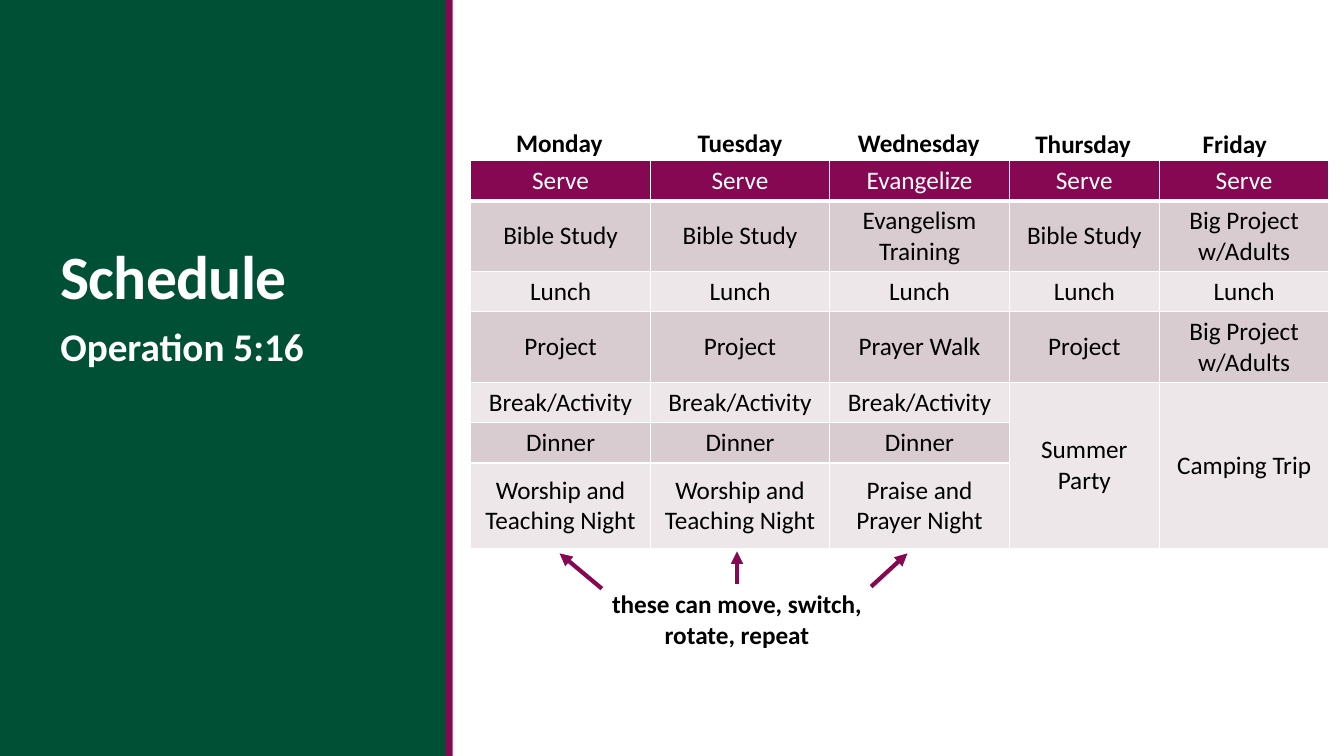
import pptx
import pptx.dml.color
import pptx.enum.shapes
import pptx.enum.text
import pptx.oxml.ns
import pptx.util
from lxml import etree

Inches = pptx.util.Inches
Pt = pptx.util.Pt
Align = pptx.enum.text.PP_ALIGN
Anchor = pptx.enum.text.MSO_ANCHOR
qn = pptx.oxml.ns.qn

GREEN, PLUM, WHITE, BLACK = "005035", "860852", "FFFFFF", "000000"
BANDS = ("EDE7E9", "D9CCD1")

COLUMN_WIDTHS = (1.78, 1.78, 1.78, 1.49, 1.68)
ROW_HEIGHTS = (0.39, 0.69, 0.39, 0.69, 0.39, 0.39, 0.85)
SCHEDULE = (
    ("Serve", "Serve", "Evangelize", "Serve", "Serve"),
    ("Bible Study", "Bible Study", "Evangelism Training", "Bible Study", "Big Project w/Adults"),
    ("Lunch",) * 5,
    ("Project", "Project", "Prayer Walk", "Project", "Big Project w/Adults"),
    ("Break/Activity",) * 3 + ("Summer Party", "Camping Trip"),
    ("Dinner",) * 3,
    ("Worship and Teaching Night", "Worship and Teaching Night", "Praise and Prayer Night"),
)
EVENING_ROW, PARTY_COLUMNS = 4, (3, 4)
DAYS = (
    ("Monday", 5.02, 1.21, 1.07),
    ("Tuesday", 6.82, 1.21, 1.05),
    ("Wednesday", 8.41, 1.21, 1.42),
    ("Thursday", 10.17, 1.22, 1.16),
    ("Friday", 11.83, 1.22, 0.84),
)
ARROWS = (
    ((7.31, 5.79), (7.31, 5.47)),
    ((8.64, 5.82), (9, 5.49)),
    ((5.97, 5.84), (5.55, 5.49)),
)


def rgb(value):
    return pptx.dml.color.RGBColor.from_string(value)


class Page:
    font = "Calibri"

    def __init__(self, deck):
        self.shapes = deck.slides.add_slide(deck.slide_layouts[6]).shapes

    def panel(self, left, top, width, height, color):
        shape = self.shapes.add_shape(
            pptx.enum.shapes.MSO_SHAPE.RECTANGLE,
            Inches(left), Inches(top), Inches(width), Inches(height))
        shape.shadow.inherit = False
        shape.fill.solid()
        shape.fill.fore_color.rgb = rgb(color)
        shape.line.fill.background()

    def add_spans(self, para, text, size, color, bold=False):
        """Add the text as runs, one for each line."""
        spans = []
        for number, line in enumerate(text.split("\n")):
            if number:
                para.add_line_break()
            span = para.add_run()
            span.text = line
            span.font.name = self.font
            span.font.size = Pt(size)
            span.font.bold = bold
            span.font.color.rgb = rgb(color)
            spans.append(span)
        return spans

    def text(self, text, left, top, width, height, size=18, color=BLACK,
             align=Align.LEFT, anchor=Anchor.TOP, wrap=False):
        """Add a bold text box and return its paragraph and runs."""
        box = self.shapes.add_textbox(Inches(left), Inches(top), Inches(width), Inches(height))
        frame = box.text_frame
        frame.word_wrap = wrap
        frame.vertical_anchor = anchor
        para = frame.paragraphs[0]
        para.alignment = align
        return para, self.add_spans(para, text, size, color, bold=True)

    def borders(self, cell, bottom):
        properties = cell._tc.get_or_add_tcPr()
        for side, width in (("L", 1), ("R", 1), ("T", 1), ("B", bottom)):
            line = etree.SubElement(properties, qn(f"a:ln{side}"), w=str(Pt(width)))
            fill = etree.SubElement(line, qn("a:solidFill"))
            etree.SubElement(fill, qn("a:srgbClr"), val=WHITE)

    def table(self, left, top):
        table = self.shapes.add_table(
            len(ROW_HEIGHTS), len(COLUMN_WIDTHS), Inches(left), Inches(top),
            Inches(sum(COLUMN_WIDTHS)), Inches(sum(ROW_HEIGHTS))).table
        table.horz_banding = False
        for column, width in zip(table.columns, COLUMN_WIDTHS):
            column.width = Inches(width)
        for number, (row, height) in enumerate(zip(table.rows, ROW_HEIGHTS)):
            row.height = Inches(height)
            header = number == 0
            for cell in row.cells:
                self.borders(cell, 3 if header else 1)
                cell.fill.solid()
                cell.fill.fore_color.rgb = rgb(PLUM if header else BANDS[number % 2])
            for cell, text in zip(row.cells, SCHEDULE[number]):
                cell.vertical_anchor = Anchor.MIDDLE
                para = cell.text_frame.paragraphs[0]
                para.alignment = Align.CENTER
                self.add_spans(para, text, 18, WHITE if header else BLACK)
        for column in PARTY_COLUMNS:
            table.cell(EVENING_ROW, column).merge(table.cell(len(ROW_HEIGHTS) - 1, column))

    def arrow(self, start, end):
        connector = self.shapes.add_connector(
            pptx.enum.shapes.MSO_CONNECTOR.STRAIGHT, *map(Inches, start + end))
        connector.line.color.rgb = rgb(PLUM)
        connector.line.width = Pt(3)
        etree.SubElement(connector.line._get_or_add_ln(), qn("a:tailEnd"), type="triangle")
        etree.SubElement(connector._element.spPr, qn("a:effectLst"))


def main():
    deck = pptx.Presentation()
    deck.slide_width, deck.slide_height = Inches(13.33), Inches(7.5)
    page = Page(deck)
    page.panel(0, 0, 4.43, 7.5, GREEN)
    page.panel(4.42, 0, 0.07, 7.5, PLUM)

    para, spans = page.text("Schedule", 0.5, 0.65, 3.58, 2.5, 44, WHITE,
                            anchor=Anchor.BOTTOM, wrap=True)
    para.line_spacing = 0.85
    spans[0].font._element.set("spc", "-50")
    para, spans = page.text("Operation 5:16", 0.5, 3.2, 3.5, 3.7, 28, WHITE, wrap=True)
    para.line_spacing = 0.9
    para.space_before, para.space_after = Pt(12), Pt(2)

    page.table(4.67, 1.59)
    for day, left, top, width in DAYS:
        page.text(day, left, top, width, 0.4)
    page.text("these can move, switch,\nrotate, repeat", 5.96, 5.79, 2.7, 0.71,
              align=Align.CENTER)
    for start, end in ARROWS:
        page.arrow(start, end)
    deck.save("out.pptx")


if __name__ == "__main__":
    main()
